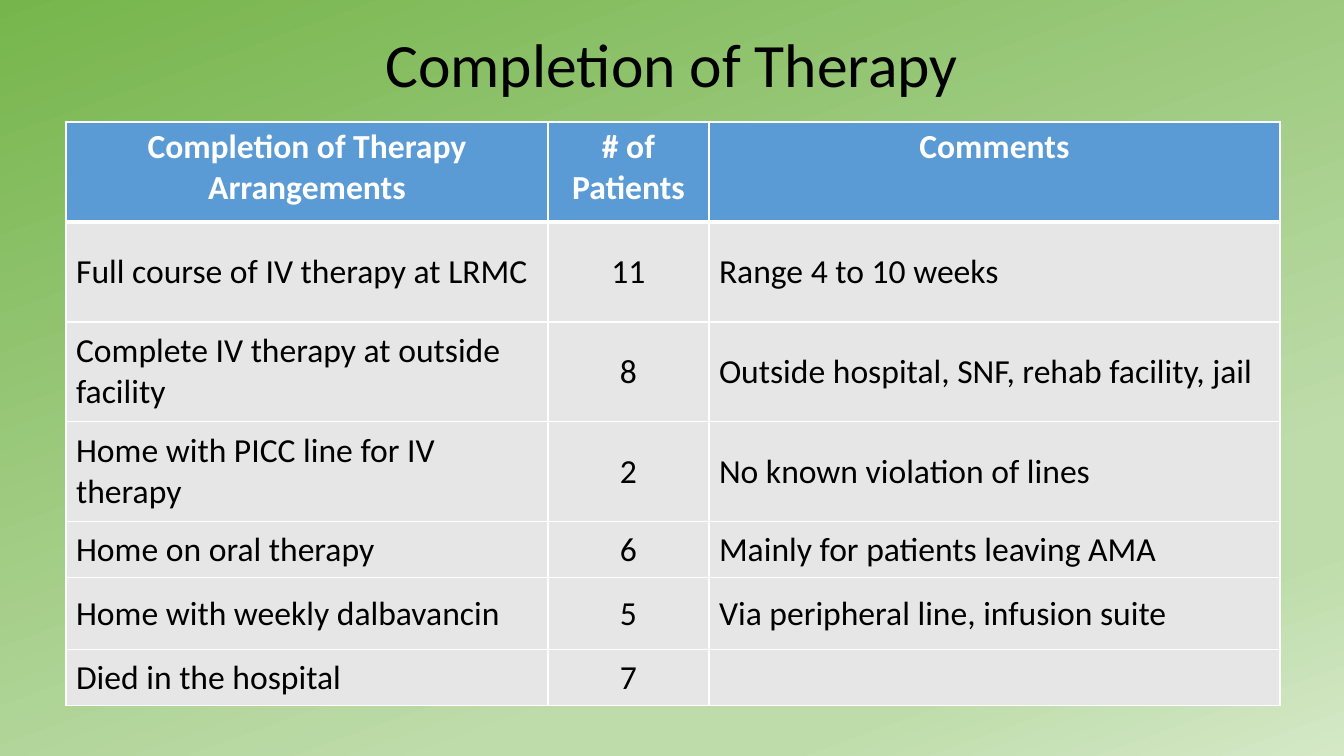
from dataclasses import dataclass

import pptx
import pptx.dml.color
import pptx.enum.text
import pptx.oxml
import pptx.oxml.ns
import pptx.util

PX = 914400 / 100.8
ALIGN = pptx.enum.text.PP_ALIGN
ANCHOR = pptx.enum.text.MSO_ANCHOR


@dataclass(frozen=True)
class Theme:
    font: str = "Calibri"
    title_size: int = 44
    table_size: int = 24
    text: str = "000000"
    header_text: str = "FFFFFF"
    header_fill: str = "5B9BD5"
    body_fill: str = "E7E6E6"
    border: str = "FFFFFF"
    thin: int = 1
    thick: int = 3
    gradient: tuple = ((0, "76B54C"), (74, "BEDCAA"), (83, "BEDCAA"), (100, "D4E8C6"))
    gradient_angle: int = 70


THEME = Theme()

COLUMNS = (482, 161, 571)
ROWS = (
    (100, ("Completion of Therapy Arrangements", "# of\nPatients", "Comments")),
    (100, ("Full course of IV therapy at LRMC", "11", "Range 4 to 10 weeks")),
    (100, ("Complete IV therapy at outside facility", "8",
           "Outside hospital, SNF, rehab facility, jail")),
    (100, ("Home with PICC line for IV therapy", "2", "No known violation of lines")),
    (56, ("Home on oral therapy", "6", "Mainly for patients leaving AMA")),
    (72, ("Home with weekly dalbavancin", "5", "Via peripheral line, infusion suite")),
    (56, ("Died in the hospital", "7", "")),
)


def px(n):
    return pptx.util.Emu(round(n * PX))


def rgb(color):
    return pptx.dml.color.RGBColor.from_string(color)


def add_run(p, text, size, color, bold=False):
    r = p.add_run()
    r.text = text
    r.font.name = THEME.font
    r.font.size = pptx.util.Pt(size)
    r.font.bold = bold
    r.font.color.rgb = rgb(color)


def paint_background(s):
    fill = s.background.fill
    fill.gradient()
    # python-pptx measures the angle counter-clockwise
    fill.gradient_angle = 360 - THEME.gradient_angle
    stops = s._element.find(".//" + pptx.oxml.ns.qn("a:gsLst"))
    for stop in list(stops):
        stops.remove(stop)
    for position, color in THEME.gradient:
        stops.append(pptx.oxml.parse_xml(
            f'<a:gs {pptx.oxml.ns.nsdecls("a")} pos="{position * 1000}">'
            f'<a:srgbClr val="{color}"/></a:gs>'))


def place_title(s, text, left, top, width, height):
    sp = s.shapes.title
    sp.left, sp.top, sp.width, sp.height = map(px, (left, top, width, height))
    tf = sp.text_frame
    tf.word_wrap = True
    tf.vertical_anchor = ANCHOR.MIDDLE
    p = tf.paragraphs[0]
    p.alignment = ALIGN.CENTER
    p.line_spacing = 0.9
    add_run(p, text, THEME.title_size, THEME.text)


def set_borders(cell, top, bottom):
    """Draw all four sides; top and bottom are widths in points."""
    properties = cell._tc.get_or_add_tcPr()
    sides = (("L", THEME.thin), ("R", THEME.thin), ("T", top), ("B", bottom))
    for i, (side, width) in enumerate(sides):
        properties.insert(i, pptx.oxml.parse_xml(
            f'<a:ln{side} {pptx.oxml.ns.nsdecls("a")} w="{pptx.util.Pt(width)}">'
            f'<a:solidFill><a:srgbClr val="{THEME.border}"/></a:solidFill></a:ln{side}>'))


def fill_cell(cell, text, row, column):
    header = row == 0
    cell.fill.solid()
    cell.fill.fore_color.rgb = rgb(THEME.header_fill if header else THEME.body_fill)
    set_borders(cell, THEME.thick if row == 1 else THEME.thin,
                THEME.thick if header else THEME.thin)
    cell.vertical_anchor = ANCHOR.TOP if header else ANCHOR.MIDDLE
    if not text:
        return
    tf = cell.text_frame
    for i, line in enumerate(text.split("\n")):
        p = tf.add_paragraph() if i else tf.paragraphs[0]
        p.alignment = ALIGN.CENTER if header or column == 1 else ALIGN.LEFT
        add_run(p, line, THEME.table_size,
                THEME.header_text if header else THEME.text, bold=header)


def add_therapy_table(s, left, top):
    width, height = sum(COLUMNS), sum(h for h, _ in ROWS)
    frame = s.shapes.add_table(len(ROWS), len(COLUMNS),
                               px(left), px(top), px(width), px(height))
    table = frame.table
    table.horz_banding = False
    for column, column_width in zip(table.columns, COLUMNS):
        column.width = px(column_width)
    for i, (row_height, texts) in enumerate(ROWS):
        table.rows[i].height = px(row_height)
        for j, text in enumerate(texts):
            fill_cell(table.cell(i, j), text, i, j)


def main():
    prs = pptx.Presentation()
    prs.slide_width, prs.slide_height = px(1344), px(756)
    s = prs.slides.add_slide(prs.slide_layouts.get_by_name("Title Only"))
    paint_background(s)
    place_title(s, "Completion of Therapy", 92, 24, 1160, 87)
    add_therapy_table(s, 66, 122)
    prs.save("out.pptx")


if __name__ == "__main__":
    main()
